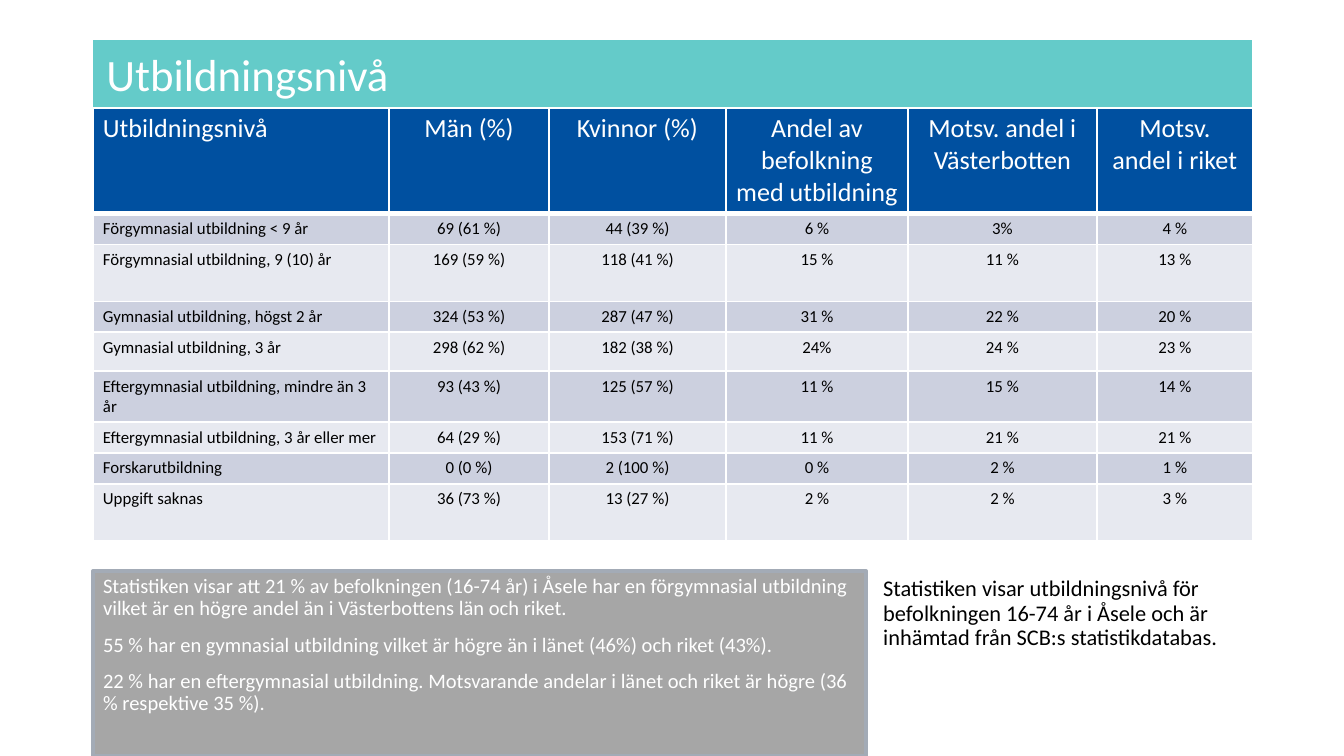
from lxml import etree
from pptx import Presentation, util as u
from pptx.dml import color
from pptx.enum import shapes, text
from pptx.oxml import ns

EMU_PER_PX = 914400 / 134.4
WHITE, BLACK = "FFFFFF", "000000"
TEAL, BLUE = "64CBC9", "0050A0"
BANDS = ("CCD0DF", "E7E9F0")
GREY, GREY_BLUE = "A6A6A6", "A3ABB6"
LEFT, ALIGN_CENTER = 93, text.PP_ALIGN.CENTER

COLUMN_WIDTHS = [296, 160, 177, 182, 189, 156]
ROW_HEIGHTS = [105, 31, 57, 31, 39, 50, 31, 31, 57]
EDUCATION_ROWS = [
    ["Utbildningsnivå", "Män (%)", "Kvinnor (%)", "Andel av befolkning med utbildning",
     "Motsv. andel i Västerbotten", "Motsv. andel i riket"],
    ["Förgymnasial utbildning < 9 år", "69 (61 %)", "44 (39 %)", "6 %", "3%", "4 %"],
    ["Förgymnasial utbildning, 9 (10) år", "169 (59 %)", "118 (41 %)", "15 %", "11 %", "13 %"],
    ["Gymnasial utbildning, högst 2 år", "324 (53 %)", "287 (47 %)", "31 %", "22 %", "20 %"],
    ["Gymnasial utbildning, 3 år", "298 (62 %)", "182 (38 %)", "24%", "24 %", "23 %"],
    ["Eftergymnasial utbildning, mindre än 3 år", "93 (43 %)", "125 (57 %)", "11 %", "15 %", "14 %"],
    ["Eftergymnasial utbildning, 3 år eller mer", "64 (29 %)", "153 (71 %)", "11 %", "21 %", "21 %"],
    ["Forskarutbildning", "0 (0 %)", "2 (100 %)", "0 %", "2 %", "1 %"],
    ["Uppgift saknas", "36 (73 %)", "13 (27 %)", "2 %", "2 %", "3 %"],
]
FINDINGS = [
    "Statistiken visar att 21 % av befolkningen (16-74 år) i Åsele har en förgymnasial utbildning "
    "vilket är en högre andel än i Västerbottens län och riket.",
    "55 % har en gymnasial utbildning vilket är högre än i länet (46%) och riket (43%).",
    "22 % har en eftergymnasial utbildning. Motsvarande andelar i länet och riket är högre "
    "(36 % respektive 35 %).",
]
SOURCE_NOTE = ("Statistiken visar utbildningsnivå för befolkningen 16-74 år i Åsele och är "
               "inhämtad från SCB:s statistikdatabas.")


def px(length):
    return u.Emu(round(length * EMU_PER_PX))


def rgb(value):
    return color.RGBColor.from_string(value)


class SlideBuilder:
    font_name = "Calibri"

    def __init__(self, slide):
        self.slide = slide

    def paint(self, target, fill):
        target.fill.solid()
        target.fill.fore_color.rgb = rgb(fill)

    def set_text(self, frame, lines, size, ink, align=text.PP_ALIGN.LEFT, spacing=None, gap=0):
        frame.word_wrap = True
        frame.text = "\n".join(lines)
        for index, paragraph in enumerate(frame.paragraphs):
            paragraph.alignment = align
            paragraph.space_before = u.Pt(gap if index else 0)
            if spacing:
                paragraph.line_spacing = spacing
            for run in paragraph.runs:
                run.font.name = self.font_name
                run.font.size = u.Pt(size)
                run.font.bold = False
                run.font.color.rgb = rgb(ink)

    def set_margins(self, target):
        target.margin_left = target.margin_right = px(10)
        target.margin_top = target.margin_bottom = px(5)

    def title(self, box, line, size):
        title = self.slide.shapes.title
        title.left, title.top, title.width, title.height = map(px, box)
        self.paint(title, TEAL)
        self.set_text(title.text_frame, [line], size, WHITE)
        title.text_frame.auto_size = text.MSO_AUTO_SIZE.NONE
        title.text_frame.vertical_anchor = text.MSO_ANCHOR.MIDDLE

    def borders(self, cell, bottom):
        properties = cell._tc.get_or_add_tcPr()
        for side, points in (("L", 1), ("R", 1), ("T", 1), ("B", bottom)):
            line = etree.SubElement(properties, ns.qn(f"a:ln{side}"), w=str(u.Pt(points)))
            fill = etree.SubElement(line, ns.qn("a:solidFill"))
            etree.SubElement(fill, ns.qn("a:srgbClr"), val=WHITE)

    def table(self, left, top, widths, heights, rows):
        table = self.slide.shapes.add_table(
            len(rows), len(widths), px(left), px(top), px(sum(widths)), px(sum(heights))).table
        for column, width in zip(table.columns, widths):
            column.width = px(width)
        for row_index, values in enumerate(rows):
            table.rows[row_index].height = px(heights[row_index])
            header = row_index == 0
            for column_index, value in enumerate(values):
                cell = table.cell(row_index, column_index)
                self.borders(cell, 3 if header else 1)
                self.paint(cell, BLUE if header else BANDS[(row_index - 1) % 2])
                self.set_margins(cell)
                self.set_text(cell.text_frame, [value], 14 if header else 9,
                              WHITE if header else BLACK,
                              ALIGN_CENTER if column_index else text.PP_ALIGN.LEFT)

    def panel(self, box, lines, size):
        panel = self.slide.shapes.add_shape(shapes.MSO_SHAPE.RECTANGLE, *map(px, box))
        panel.shadow.inherit = False
        self.paint(panel, GREY)
        panel.line.color.rgb = rgb(GREY_BLUE)
        panel.line.width = u.Pt(2)
        self.set_margins(panel.text_frame)
        panel.text_frame.vertical_anchor = text.MSO_ANCHOR.TOP
        self.set_text(panel.text_frame, lines, size, WHITE, spacing=0.9, gap=7.5)

    def note(self, box, line, size):
        note = self.slide.shapes.add_textbox(*map(px, box))
        self.set_text(note.text_frame, [line], size, BLACK, spacing=0.9)


def main():
    presentation = Presentation()
    presentation.slide_width, presentation.slide_height = px(1344), px(756)
    builder = SlideBuilder(presentation.slides.add_slide(presentation.slide_layouts[5]))
    builder.title((LEFT, 40, 1159, 68), "Utbildningsnivå", 24)
    builder.table(LEFT, 108, COLUMN_WIDTHS, ROW_HEIGHTS, EDUCATION_ROWS)
    builder.panel((LEFT, 571, 773, 185), FINDINGS, 11)
    builder.note((870, 571, 384, 145), SOURCE_NOTE, 12)
    presentation.save("out.pptx")


if __name__ == "__main__":
    main()
